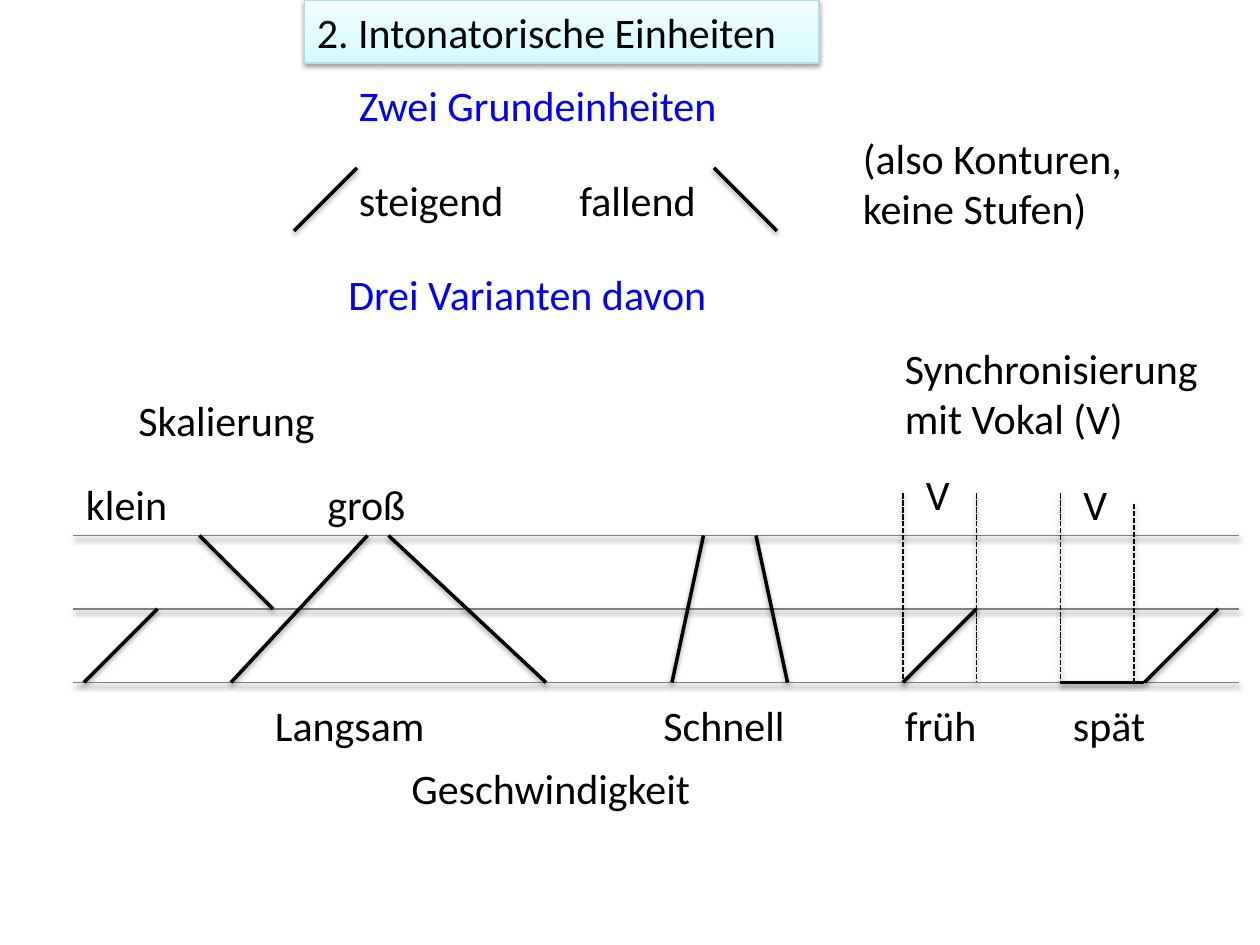
from typing import NamedTuple

from lxml import etree
from pptx import Presentation
from pptx.dml.color import RGBColor
from pptx.enum import dml, shapes, text
from pptx.oxml import ns
from pptx.util import Emu, Inches, Pt

COLUMNS, ROWS = 120, 90
FONT = "Calibri"
BLACK, BLUE, GREY = "000000", "0000FF", "808080"
TITLE_EDGE = "B6DCDF"
TITLE_STOPS = {0: "D3FBFF", 35: "DFFCFF", 100: "F2FEFF"}
HIGH, MIDDLE, LOW = 51, 58, 65
CAPTION_ROW = 66
LEFT, RIGHT = 7, 118

deck = Presentation()
deck.slide_width, deck.slide_height = Inches(10), Inches(7.5)
page = deck.slides.add_slide(deck.slide_layouts[6])


class Label(NamedTuple):
    wording: str
    column: float
    row: float
    width: float
    height: float = 6
    color: str = BLACK


class Stroke(NamedTuple):
    start: tuple[float, float]
    end: tuple[float, float]
    weight: float = 2
    color: str = BLACK
    dashed: bool = False


def across(columns: float) -> Emu:
    return Emu(round(deck.slide_width * columns / COLUMNS))


def down(rows: float) -> Emu:
    return Emu(round(deck.slide_height * rows / ROWS))


def rgb(color: str) -> RGBColor:
    return RGBColor.from_string(color)


def add_node(parent, tag: str, **values):
    return etree.SubElement(parent, ns.qn(tag), {key: str(value) for key, value in values.items()})


def cast_shadow(shape) -> None:
    effects = add_node(shape._element.spPr, "a:effectLst")
    shadow = add_node(effects, "a:outerShdw", blurRad=Pt(3.1), dist=Pt(1.6), dir=90 * 60000, rotWithShape=0)
    add_node(add_node(shadow, "a:srgbClr", val=BLACK), "a:alpha", val=38000)


def write_text(shape, label: Label) -> None:
    frame = shape.text_frame
    frame_format = {
        "word_wrap": True,
        "auto_size": text.MSO_AUTO_SIZE.SHAPE_TO_FIT_TEXT,
        "vertical_anchor": text.MSO_ANCHOR.TOP,
    }
    for name, value in frame_format.items():
        setattr(frame, name, value)
    para = frame.paragraphs[0]
    para.alignment = text.PP_ALIGN.LEFT
    span = para.add_run()
    span.text = label.wording
    for name, value in {"name": FONT, "size": Pt(24)}.items():
        setattr(span.font, name, value)
    span.font.color.rgb = rgb(label.color)


def place(label: Label) -> tuple[Emu, Emu, Emu, Emu]:
    return across(label.column), down(label.row), across(label.width), down(label.height)


def draw_label(label: Label) -> None:
    write_text(page.shapes.add_textbox(*place(label)), label)


def draw_title(label: Label) -> None:
    box = page.shapes.add_shape(shapes.MSO_SHAPE.RECTANGLE, *place(label))
    box.fill.gradient()
    box.fill.gradient_angle = 90
    stops = box._element.spPr.find(".//" + ns.qn("a:gsLst"))
    for stop in list(stops):
        stops.remove(stop)
    for percent, color in TITLE_STOPS.items():
        add_node(add_node(stops, "a:gs", pos=percent * 1000), "a:srgbClr", val=color)
    box.line.color.rgb = rgb(TITLE_EDGE)
    box.line.width = Pt(0.75)
    cast_shadow(box)
    write_text(box, label)


def draw_stroke(stroke: Stroke) -> None:
    (from_column, from_row), (to_column, to_row) = stroke.start, stroke.end
    line = page.shapes.add_connector(
        shapes.MSO_CONNECTOR.STRAIGHT,
        across(from_column), down(from_row), across(to_column), down(to_row),
    )
    line.line.color.rgb = rgb(stroke.color)
    line.line.width = Pt(stroke.weight)
    if stroke.dashed:
        line.line.dash_style = dml.MSO_LINE.SQUARE_DOT
    cast_shadow(line)


TITLE = Label("2. Intonatorische Einheiten", 29, 0, 49)

LABELS = [
    Label("Zwei Grundeinheiten", 33, 7, 40, color=BLUE),
    Label("steigend", 33, 16, 17),
    Label("fallend", 54, 16, 17),
    Label("(also Konturen, keine Stufen)", 81, 12, 31, 11),
    Label("Drei Varianten davon", 32, 25, 41, color=BLUE),
    Label("Skalierung", 12, 37, 21),
    Label("Synchronisierung mit Vokal (V)", 85, 32, 35, 11),
    Label("klein", 7, 45, 13),
    Label("groß", 30, 45, 13),
    Label("V", 87, 44, 4.8),
    Label("V", 102, 45, 4.8),
    Label("Langsam", 25, CAPTION_ROW, 22),
    Label("Schnell", 62, CAPTION_ROW, 15),
    Label("früh", 85, CAPTION_ROW, 10),
    Label("spät", 101, CAPTION_ROW, 10),
    Label("Geschwindigkeit", 38, 72, 31),
]

LEVELS = [Stroke((LEFT, row), (RIGHT, row), 1, GREY) for row in (LOW, MIDDLE, HIGH)]

VOWEL_LIMITS = [
    Stroke((column, top), (column, LOW), 1, dashed=True)
    for column, top in ((86, 47), (93, 47), (101, 47), (108, 48))
]

CONTOURS = [
    Stroke((28, 22), (34, 16)),
    Stroke((74, 22), (68, 16)),
    Stroke((8, LOW), (15, MIDDLE)),
    Stroke((26, MIDDLE), (19, HIGH)),
    Stroke((22, LOW), (35, HIGH)),
    Stroke((52, LOW), (37, HIGH)),
    Stroke((64, LOW), (67, HIGH)),
    Stroke((75, LOW), (72, HIGH)),
    Stroke((86, LOW), (93, MIDDLE)),
    Stroke((109, LOW), (116, MIDDLE)),
    Stroke((109, LOW), (101, LOW)),
]

draw_title(TITLE)
for stroke in LEVELS + VOWEL_LIMITS + CONTOURS:
    draw_stroke(stroke)
for label in LABELS:
    draw_label(label)

deck.save("out.pptx")
